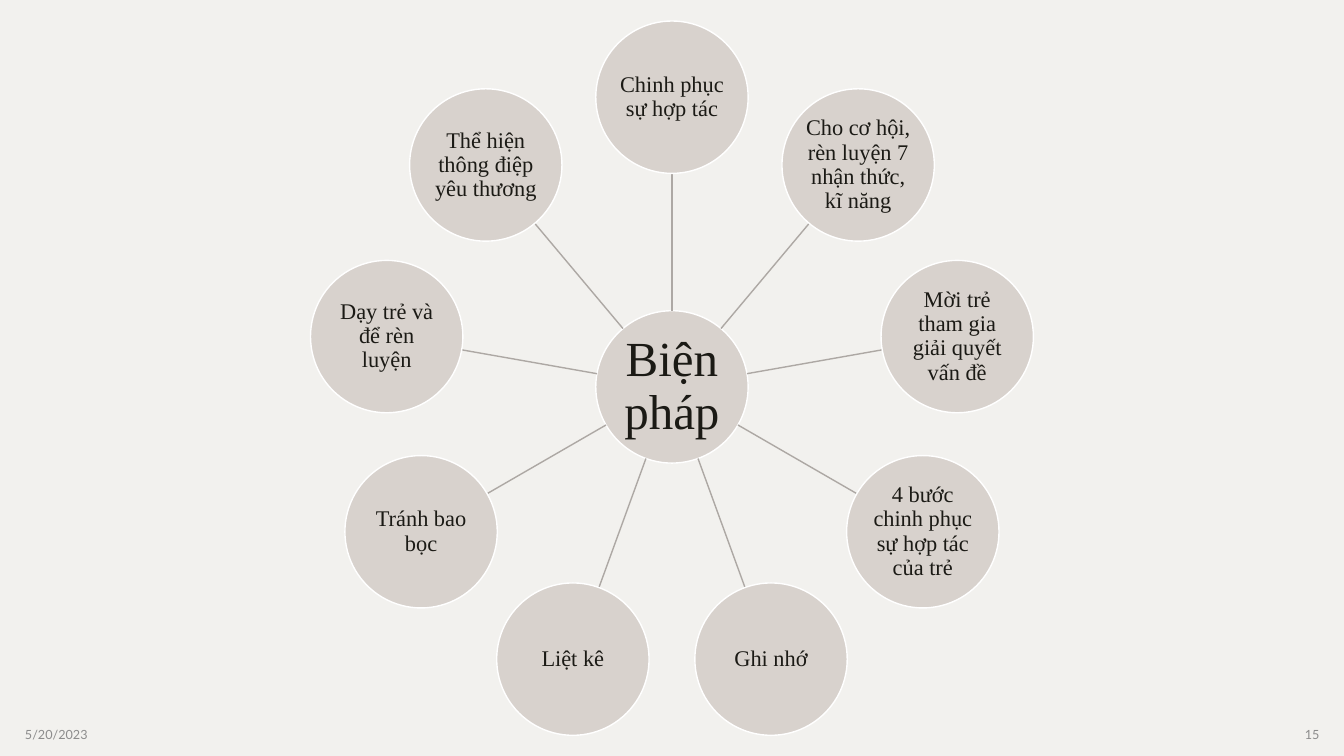
from dataclasses import dataclass
from math import cos, radians, sin

from lxml.etree import SubElement
from pptx import Presentation
from pptx.dml.color import RGBColor
from pptx.enum.shapes import MSO_CONNECTOR, MSO_SHAPE
from pptx.enum.text import MSO_ANCHOR, PP_ALIGN
from pptx.oxml.ns import qn
from pptx.util import Cm, Pt

HUB = "Biện pháp"
MEASURES = [
    "Chinh phục sự hợp tác",
    "Cho cơ hội, rèn luyện 7 nhận thức, kĩ năng",
    "Mời trẻ tham gia giải quyết vấn đề",
    "4 bước chinh phục sự hợp tác của trẻ",
    "Ghi nhớ",
    "Liệt kê",
    "Tránh bao bọc",
    "Dạy trẻ và để rèn luyện",
    "Thể hiện thông điệp yêu thương",
]
FOOTERS = [
    ("5/20/2023", 0.38, PP_ALIGN.LEFT),
    ("15", 25.88, PP_ALIGN.RIGHT),
]


@dataclass(frozen=True)
class Theme:
    background: str = "F2F1EE"
    circle: str = "D8D2CD"
    outline: str = "FFFFFF"
    spoke: str = "ADA8A4"
    ink: str = "1B1A15"
    muted: str = "8C8C8C"
    body_font: str = "Times New Roman"
    footer_font: str = "Lato"
    hub_size: int = 35
    measure_size: int = 16
    footer_size: int = 9
    line_width: int = 1


THEME = Theme()
SLIDE_WIDTH, SLIDE_HEIGHT = 33.87, 19.05
CENTER_X, CENTER_Y = SLIDE_WIDTH / 2, 9.75
ORBIT = 7.3
RADIUS = 1.92


def color(value):
    return RGBColor.from_string(value)


def write_text(shape, text, *, size, font, ink, align=PP_ALIGN.CENTER,
               spacing=None, inset=None):
    frame = shape.text_frame
    frame.word_wrap = True
    frame.vertical_anchor = MSO_ANCHOR.MIDDLE
    if inset is not None:
        frame.margin_left = frame.margin_right = Cm(inset)
        frame.margin_top = frame.margin_bottom = Cm(inset)
    para = frame.paragraphs[0]
    para.alignment = align
    if spacing:
        para.line_spacing = spacing
    span = para.add_run()
    span.text = text
    span.font.size = Pt(size)
    span.font.name = font
    span.font.color.rgb = color(ink)


def polar(angle, distance):
    return (CENTER_X + distance * cos(radians(angle)),
            CENTER_Y + distance * sin(radians(angle)))


def add_circle(shapes, center, text, size, inset):
    x, y = center
    circle = shapes.add_shape(MSO_SHAPE.OVAL, Cm(x - RADIUS), Cm(y - RADIUS),
                              Cm(2 * RADIUS), Cm(2 * RADIUS))
    circle.shadow.inherit = False
    circle.fill.solid()
    circle.fill.fore_color.rgb = color(THEME.circle)
    circle.line.color.rgb = color(THEME.outline)
    circle.line.width = Pt(THEME.line_width)
    write_text(circle, text, size=size, font=THEME.body_font, ink=THEME.ink,
               spacing=0.9, inset=inset)


def add_spoke(shapes, angle):
    start = polar(angle, RADIUS)
    end = polar(angle, ORBIT - RADIUS)
    spoke = shapes.add_connector(MSO_CONNECTOR.STRAIGHT,
                                 *(Cm(value) for value in start + end))
    spoke.line.color.rgb = color(THEME.spoke)
    spoke.line.width = Pt(THEME.line_width)
    SubElement(spoke._element.spPr, qn("a:effectLst"))


def main():
    deck = Presentation()
    deck.slide_width, deck.slide_height = Cm(SLIDE_WIDTH), Cm(SLIDE_HEIGHT)
    page = deck.slides.add_slide(deck.slide_layouts[6])
    page.background.fill.solid()
    page.background.fill.fore_color.rgb = color(THEME.background)

    for text, left, align in FOOTERS:
        box = page.shapes.add_textbox(Cm(left), Cm(18), Cm(7.62), Cm(1.02))
        write_text(box, text, size=THEME.footer_size, font=THEME.footer_font,
                   ink=THEME.muted, align=align)

    diagram = page.shapes.add_group_shape().shapes
    add_circle(diagram, (CENTER_X, CENTER_Y), HUB, THEME.hub_size, 0.05)
    for index, measure in enumerate(MEASURES):
        angle = index * 360 / len(MEASURES) - 90
        add_spoke(diagram, angle)
        add_circle(diagram, polar(angle, ORBIT), measure,
                   THEME.measure_size, 0.03)

    deck.save("out.pptx")


if __name__ == "__main__":
    main()
